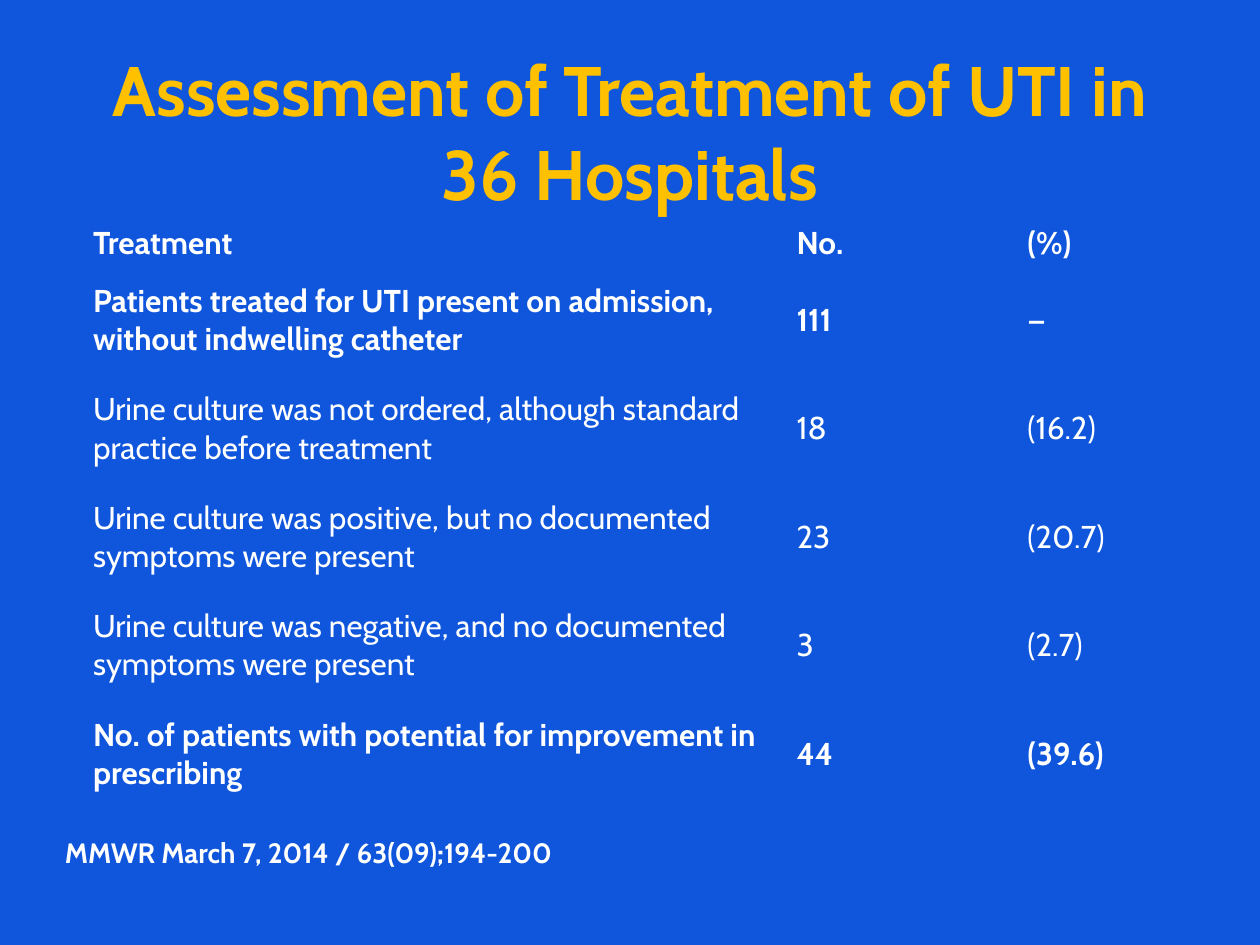
from pptx import Presentation
from pptx.dml.color import RGBColor
from pptx.enum.text import MSO_ANCHOR, PP_ALIGN
from pptx.util import Pt

MIDDLE, BOTTOM = MSO_ANCHOR.MIDDLE, MSO_ANCHOR.BOTTOM
LEFT, CENTER = PP_ALIGN.LEFT, PP_ALIGN.CENTER
FONT = "Cabin"
COLORS = {"back": "0F56DC", "title": "FFC000", "text": "FFFFFF"}
NO_GRID = "{2D5ABB26-0587-4C30-8999-92F81FD0307C}"

TITLE = "Assessment of Treatment of UTI in 36 Hospitals"
SOURCE = "MMWR March 7, 2014 / 63(09);194-200"
ROWS = [
    ("Treatment", "No.", "(%)"),
    ("Patients treated for UTI present on admission, without indwelling catheter",
     "111", "—"),
    ("Urine culture was not ordered, although standard practice before treatment",
     "18", "(16.2)"),
    ("Urine culture was positive, but no documented symptoms were present",
     "23", "(20.7)"),
    ("Urine culture was negative, and no documented symptoms were present",
     "3", "(2.7)"),
    ("No. of patients with potential for improvement in prescribing",
     "44", "(39.6)"),
]
BOLD_ROWS = {0, 1, 5}
WIDTHS = [402, 132, 90]
HEIGHTS = [19.5] + [62] * 5


def write(frame, text, size, color="text", bold=True, align=LEFT):
    para = frame.paragraphs[0]
    para.text = text
    para.alignment = align
    font = para.font
    font.name, font.size, font.bold = FONT, Pt(size), bold
    font.color.rgb = RGBColor.from_string(COLORS[color])
    return para


def add_box(slide, left, top, width, height):
    box = slide.shapes.add_textbox(Pt(left), Pt(top), Pt(width), Pt(height))
    frame = box.text_frame
    frame.word_wrap = True
    frame.vertical_anchor = BOTTOM
    return frame


def add_grid(slide):
    shape = slide.shapes.add_table(
        len(ROWS), len(WIDTHS), Pt(48), Pt(125.5),
        Pt(sum(WIDTHS)), Pt(sum(HEIGHTS)))
    table = shape.table
    table.first_row = table.horz_banding = False
    table._tbl.tblPr[0].text = NO_GRID
    for col, width in zip(table.columns, WIDTHS):
        col.width = Pt(width)
    for r, (row, height) in enumerate(zip(ROWS, HEIGHTS)):
        table.rows[r].height = Pt(height)
        for c, text in enumerate(row):
            cell = table.cell(r, c)
            cell.fill.background()
            cell.vertical_anchor = MIDDLE
            cell.margin_left = cell.margin_right = Pt(5.2)
            cell.margin_top = cell.margin_bottom = Pt(2.4)
            write(cell.text_frame, text, 18, bold=r in BOLD_ROWS)


def main():
    deck = Presentation()
    deck.slide_width, deck.slide_height = Pt(720), Pt(540)
    slide = deck.slides.add_slide(deck.slide_layouts[6])
    fill = slide.background.fill
    fill.solid()
    fill.fore_color.rgb = RGBColor.from_string(COLORS["back"])

    title = add_box(slide, 36, 21.6, 648, 104.4)
    write(title, TITLE, 40, "title", align=CENTER).space_after = Pt(6)
    add_grid(slide)
    source = add_box(slide, 30, 474, 648, 48)
    source.margin_bottom = Pt(25.6)
    write(source, SOURCE, 16).line_spacing = Pt(11)
    deck.save("out.pptx")


if __name__ == "__main__":
    main()
